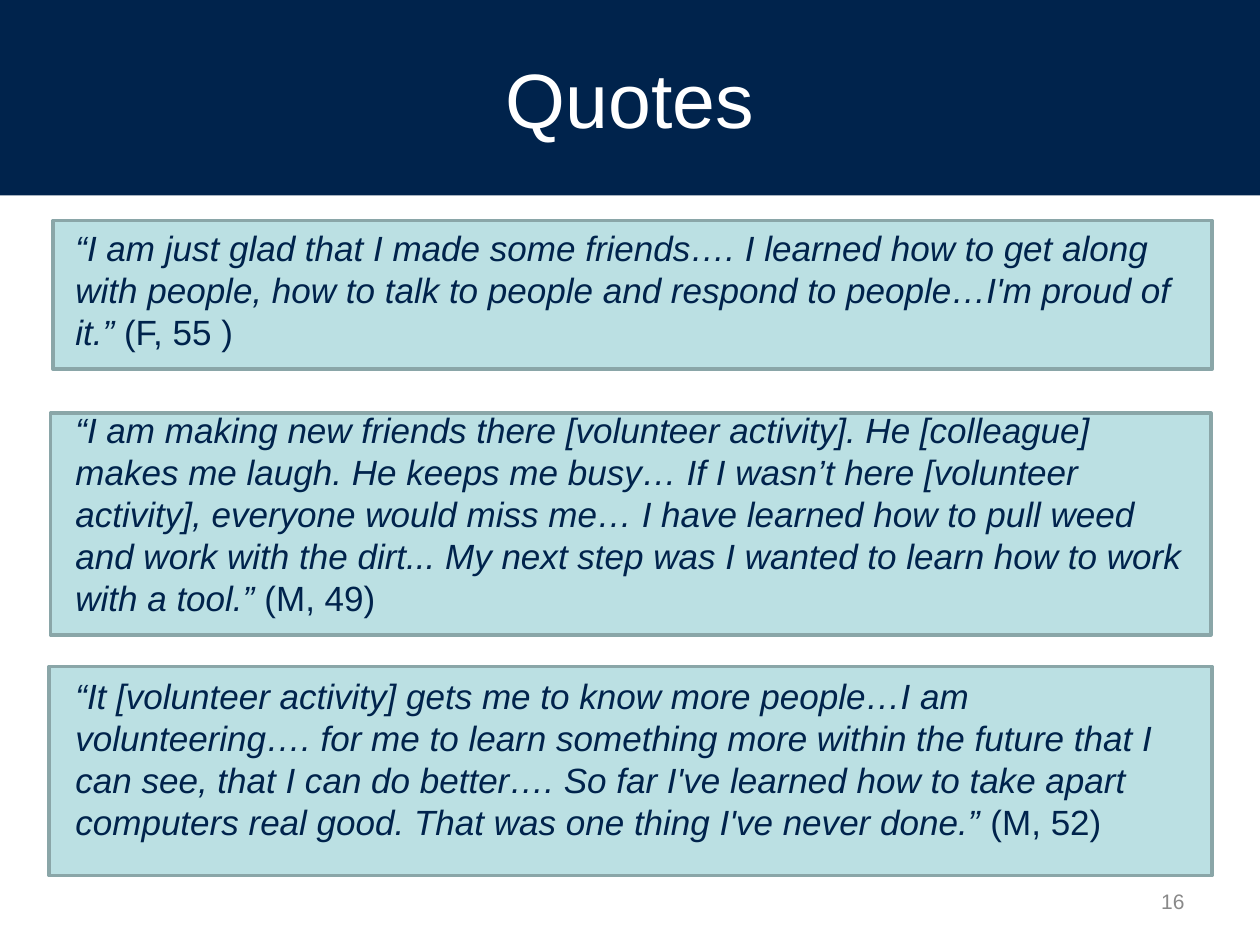
from typing import NamedTuple

from pptx import Presentation
from pptx.dml.color import RGBColor
from pptx.enum.shapes import MSO_SHAPE
from pptx.enum.text import MSO_ANCHOR, PP_ALIGN
from pptx.util import Inches, Pt

NAVY = "00234C"
WHITE = "FFFFFF"
PALE_TEAL = "BBE0E3"
TEAL_GREY = "8AA6A8"
GREY = "898989"
FONT = "Arial"


class Box(NamedTuple):
    left: float
    top: float
    width: float
    height: float


class Quote(NamedTuple):
    words: str
    speaker: str
    card: Box


QUOTES = [
    Quote("“I am just glad that I made some friends…. I learned how to get along "
          "with people, how to talk to people and respond to people…I'm proud of it.” ",
          "(F, 55 )", Box(0.42, 1.75, 9.2, 1.18)),
    Quote("“I am making new friends there [volunteer activity]. He [colleague] makes "
          "me laugh. He keeps me busy… If I wasn’t here [volunteer activity], everyone "
          "would miss me… I have learned how to pull weed and work with the dirt... "
          "My next step was I wanted to learn how to work with a tool.” ",
          "(M, 49)", Box(0.4, 3.28, 9.21, 1.76)),
    Quote("“It [volunteer activity] gets me to know more people…I am volunteering…. "
          "for me to learn something more within the future that I can see, that I can "
          "do better…. So far I've learned how to take apart computers real good. "
          "That was one thing I've never done.”",
          " (M, 52)", Box(0.39, 5.29, 9.23, 1.66)),
]


def color(hex_code: str) -> RGBColor:
    return RGBColor.from_string(hex_code)


def add_rectangle(shapes, box: Box, fill: str, line: str | None = None):
    rectangle = shapes.add_shape(MSO_SHAPE.RECTANGLE, *map(Inches, box))
    rectangle.shadow.inherit = False
    rectangle.fill.solid()
    rectangle.fill.fore_color.rgb = color(fill)
    if line:
        rectangle.line.color.rgb = color(line)
        rectangle.line.width = Pt(2)
    else:
        rectangle.line.fill.background()
    return rectangle


def add_text_frame(shapes, box: Box):
    frame = shapes.add_textbox(*map(Inches, box)).text_frame
    frame.word_wrap = True
    return frame


def style(paragraph, size: float, hex_code: str, align: PP_ALIGN) -> None:
    paragraph.alignment = align
    paragraph.font.name = FONT
    paragraph.font.size = Pt(size)
    paragraph.font.color.rgb = color(hex_code)


def write_line(frame, words: str, size: float, hex_code: str, align: PP_ALIGN) -> None:
    frame.vertical_anchor = MSO_ANCHOR.MIDDLE
    paragraph = frame.paragraphs[0]
    style(paragraph, size, hex_code, align)
    paragraph.add_run().text = words


def write_quotes(frame, quotes: list[Quote]) -> None:
    for index, quote in enumerate(quotes):
        paragraph = frame.add_paragraph() if index else frame.paragraphs[0]
        style(paragraph, 20, NAVY, PP_ALIGN.LEFT)
        paragraph.line_spacing = Pt(24)
        if index:
            paragraph.space_before = Pt(32)
        for words, italic in ((quote.words, True), (quote.speaker, False)):
            run = paragraph.add_run()
            run.text = words
            run.font.italic = italic


def main() -> None:
    deck = Presentation()
    deck.slide_width, deck.slide_height = Inches(10), Inches(7.5)
    shapes = deck.slides.add_slide(deck.slide_layouts[6]).shapes

    # Title band
    title = add_rectangle(shapes, Box(0, 0, 10, 1.55), NAVY)
    write_line(title.text_frame, "Quotes", 44, WHITE, PP_ALIGN.CENTER)

    # Cards, with the quotes flowing over them
    for quote in QUOTES:
        add_rectangle(shapes, quote.card, PALE_TEAL, TEAL_GREY)
    write_quotes(add_text_frame(shapes, Box(0.5, 1.75, 9, 4.95)), QUOTES)

    # Slide number
    number = add_text_frame(shapes, Box(7.17, 6.95, 2.33, 0.4))
    write_line(number, "16", 12, GREY, PP_ALIGN.RIGHT)

    deck.save("out.pptx")


if __name__ == "__main__":
    main()
